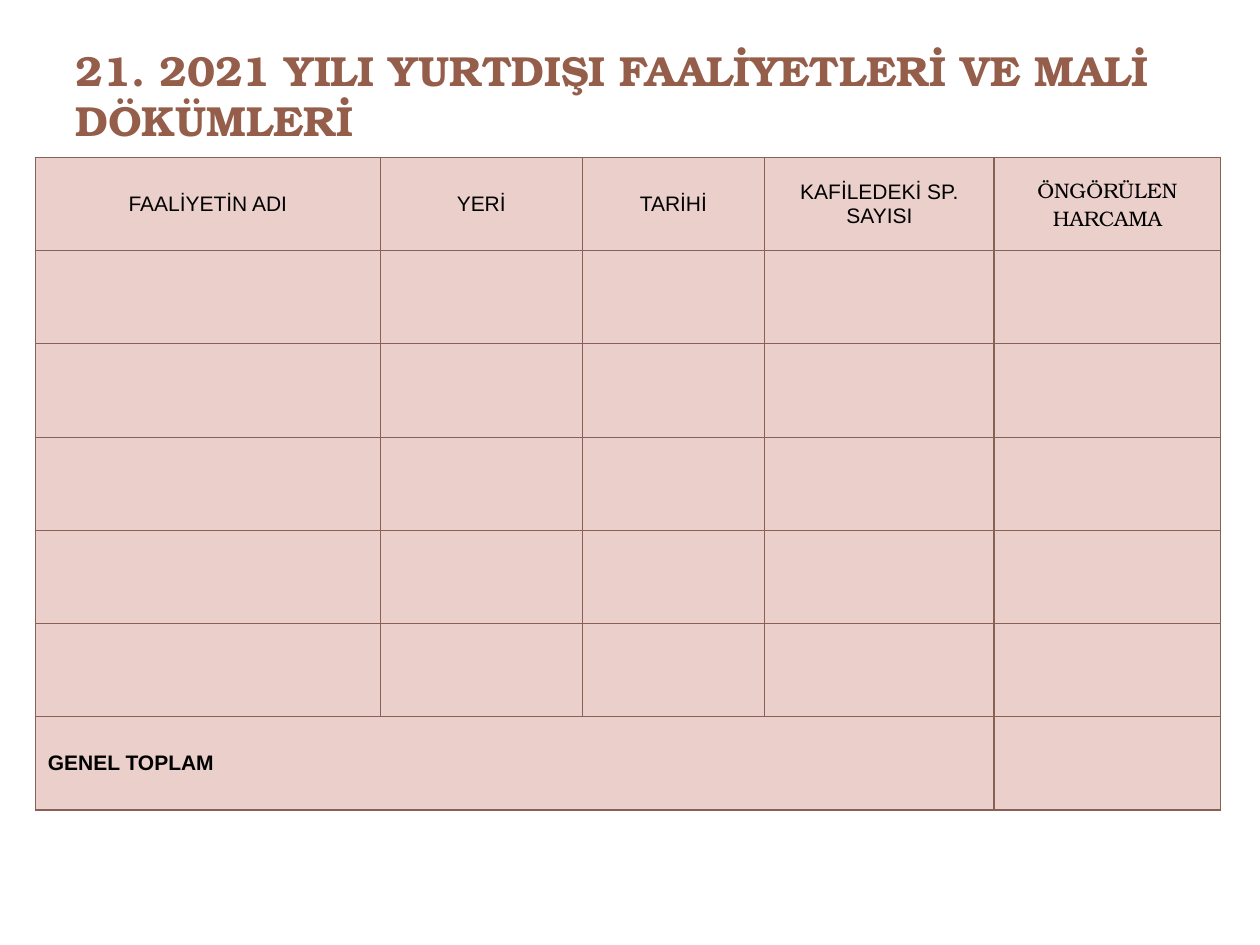
from dataclasses import dataclass

from lxml.etree import SubElement
from pptx import Presentation
from pptx.dml.color import RGBColor as RGB
from pptx.enum.text import MSO_ANCHOR as Anchor, MSO_AUTO_SIZE as AutoSize, PP_ALIGN as Align
from pptx.oxml.ns import qn
from pptx.slide import Slide
from pptx.util import Inches, Pt


@dataclass(frozen=True)
class Theme:
    title_color: RGB = RGB(0x95, 0x5E, 0x4B)
    text_color: RGB = RGB(0, 0, 0)
    cell_fill: RGB = RGB(0xEA, 0xCF, 0xCB)
    border_color: str = "896154"
    border_width: float = 0.75
    title_size: int = 24
    table_size: int = 12
    serif: str = "TeX Gyre Bonum"
    sans: str = "Arial"


@dataclass(frozen=True)
class Column:
    heading: str
    width: float
    font: str


THEME = Theme()
COLUMNS = (
    Column("FAALİYETİN ADI", 2.74, THEME.sans),
    Column("YERİ", 1.6, THEME.sans),
    Column("TARİHİ", 1.45, THEME.sans),
    Column("KAFİLEDEKİ SP. SAYISI", 1.82, THEME.sans),
    Column("ÖNGÖRÜLEN HARCAMA", 1.8, THEME.serif),
)
ROW_COUNT = 7
ROW_HEIGHT = 0.74


def add_run(paragraph, text: str, font: str, size: float, color: RGB, bold: bool = False) -> None:
    run = paragraph.add_run()
    run.text = text
    run.font.name = font
    run.font.size = Pt(size)
    run.font.color.rgb = color
    run.font.bold = bold


def add_title(slide: Slide, text: str) -> None:
    title = slide.shapes.title
    title.left, title.top = Inches(0.5), Inches(0.3)
    title.width, title.height = Inches(9), Inches(0.77)
    frame = title.text_frame
    frame.word_wrap = True
    frame.auto_size = AutoSize.NONE
    frame.vertical_anchor = Anchor.TOP
    paragraph = frame.paragraphs[0]
    paragraph.alignment = Align.LEFT
    add_run(paragraph, text, THEME.serif, THEME.title_size, THEME.title_color, bold=True)


def style_cell(cell) -> None:
    """Give a cell its borders and fill; borders come first in the XML."""
    properties = cell._tc.get_or_add_tcPr()
    for side in ("a:lnL", "a:lnR", "a:lnT", "a:lnB"):
        line = SubElement(properties, qn(side), w=str(Pt(THEME.border_width)))
        fill = SubElement(line, qn("a:solidFill"))
        SubElement(fill, qn("a:srgbClr"), val=THEME.border_color)
    cell.fill.solid()
    cell.fill.fore_color.rgb = THEME.cell_fill
    cell.vertical_anchor = Anchor.MIDDLE


def write_cell(cell, text: str, font: str, alignment: Align, bold: bool = False) -> None:
    paragraph = cell.text_frame.paragraphs[0]
    paragraph.alignment = alignment
    paragraph.space_before = Pt(THEME.table_size * 0.2)
    add_run(paragraph, text, font, THEME.table_size, THEME.text_color, bold)


def add_activity_table(slide: Slide) -> None:
    width = sum(column.width for column in COLUMNS)
    table = slide.shapes.add_table(
        ROW_COUNT, len(COLUMNS), Inches(0.28), Inches(1.25),
        Inches(width), Inches(ROW_HEIGHT * ROW_COUNT),
    ).table
    table.first_row = table.horz_banding = False
    for row in table.rows:
        row.height = Inches(ROW_HEIGHT)
    for cell in table.iter_cells():
        style_cell(cell)

    # Headings
    for index, column in enumerate(COLUMNS):
        table.columns[index].width = Inches(column.width)
        write_cell(table.cell(0, index), column.heading, column.font, Align.CENTER)

    # Grand total
    last_row = ROW_COUNT - 1
    total = table.cell(last_row, 0)
    total.merge(table.cell(last_row, len(COLUMNS) - 2))
    write_cell(total, "GENEL TOPLAM", THEME.sans, Align.LEFT, bold=True)


def main() -> None:
    presentation = Presentation()
    presentation.slide_width, presentation.slide_height = Inches(10), Inches(7.5)
    slide = presentation.slides.add_slide(presentation.slide_layouts[5])
    add_title(slide, "21. 2021 YILI YURTDIŞI FAALİYETLERİ VE MALİ DÖKÜMLERİ")
    add_activity_table(slide)
    presentation.save("out.pptx")


if __name__ == "__main__":
    main()
